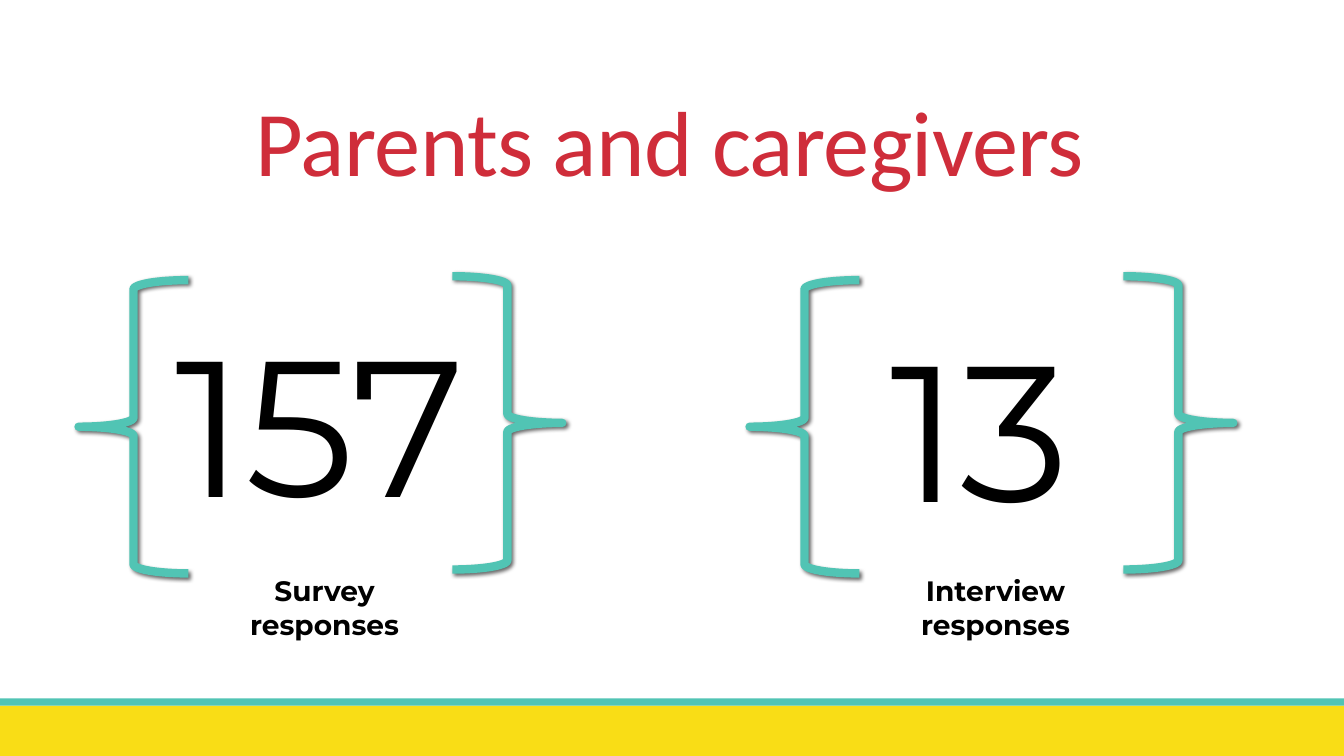
import pptx
import pptx.dml.color
import pptx.enum.shapes
import pptx.enum.text
import pptx.oxml
import pptx.oxml.ns
import pptx.util
from pptx.util import Cm

SHAPES = pptx.enum.shapes.MSO_SHAPE
ANCHORS = pptx.enum.text.MSO_ANCHOR
ALIGNS = pptx.enum.text.PP_ALIGN

SHADOW = (
    f'<a:outerShdw {pptx.oxml.ns.nsdecls("a")} blurRad="38100" dist="25400" dir="2700000">'
    '<a:srgbClr val="000000"><a:alpha val="60000"/></a:srgbClr></a:outerShdw>'
)


def color(hex_string):
    return pptx.dml.color.RGBColor.from_string(hex_string)


def write_text(frame, text, size, font="Montserrat", ink="000000", bold=False,
               align=ALIGNS.LEFT, line_spacing=None, tracking=None):
    paragraph = frame.paragraphs[0]
    paragraph.alignment = align
    if line_spacing:
        paragraph.line_spacing = line_spacing
    run = paragraph.add_run()
    run.text = text
    run.font.size = pptx.util.Pt(size)
    run.font.name = font
    run.font.bold = bold
    run.font.color.rgb = color(ink)
    if tracking:
        run.font._element.set("spc", str(round(tracking * 100)))


class SlideBuilder:
    teal = "51C4B4"
    yellow = "F9DD16"
    red = "CF2D3A"

    def __init__(self, slide):
        self.slide = slide

    def bar(self, left, top, width, height, fill):
        band = self.slide.shapes.add_shape(
            SHAPES.RECTANGLE, Cm(left), Cm(top), Cm(width), Cm(height))
        band.shadow.inherit = False
        band.fill.solid()
        band.fill.fore_color.rgb = color(fill)
        band.line.fill.background()

    def brace(self, left, top, rotation=0):
        brace = self.slide.shapes.add_shape(
            SHAPES.LEFT_BRACE, Cm(left), Cm(top), Cm(2.77), Cm(7.39))
        brace.rotation = rotation
        brace.fill.background()
        brace.line.color.rgb = color(self.teal)
        brace.line.width = pptx.util.Pt(6)
        brace.shadow.inherit = False
        effects = brace._element.spPr.find(pptx.oxml.ns.qn("a:effectLst"))
        effects.append(pptx.oxml.parse_xml(SHADOW))

    def text(self, text, left, top, width, height, anchor=ANCHORS.TOP, **style):
        box = self.slide.shapes.add_textbox(Cm(left), Cm(top), Cm(width), Cm(height))
        box.text_frame.word_wrap = True
        box.text_frame.vertical_anchor = anchor
        write_text(box.text_frame, text, **style)

    def statistic(self, left, number, number_at, number_width, label):
        """Draw a number between braces with its label below."""
        number_left, number_top = number_at
        self.brace(left, 7.06)
        self.text(number, number_left, number_top, number_width, 6.15, size=138)
        self.brace(left + 9.42, 6.96, rotation=180)
        self.text(label, left + 2.77, 14.33, 6.86, 1.96,
                  size=20, bold=True, align=ALIGNS.CENTER)


def main():
    deck = pptx.Presentation()
    deck.slide_width, deck.slide_height = Cm(33.87), Cm(19.05)
    builder = SlideBuilder(deck.slides.add_slide(deck.slide_layouts[6]))

    # Footer bands
    builder.bar(0, 17.78, 33.87, 1.27, builder.yellow)
    builder.bar(0, 17.6, 33.87, 0.18, builder.teal)

    # Title
    builder.text("Parents and caregivers", 1.35, 2.18, 31.06, 2.87,
                 anchor=ANCHORS.BOTTOM, size=66, font="Calibri", ink=builder.red,
                 align=ALIGNS.CENTER, line_spacing=0.85, tracking=-0.5)

    # Response counts
    builder.statistic(1.98, "157", (4.17, 7.54), 9.53, "Survey responses")
    builder.statistic(18.89, "13", (22.2, 7.67), 5.77, "Interview responses")

    deck.save("out.pptx")


if __name__ == "__main__":
    main()
